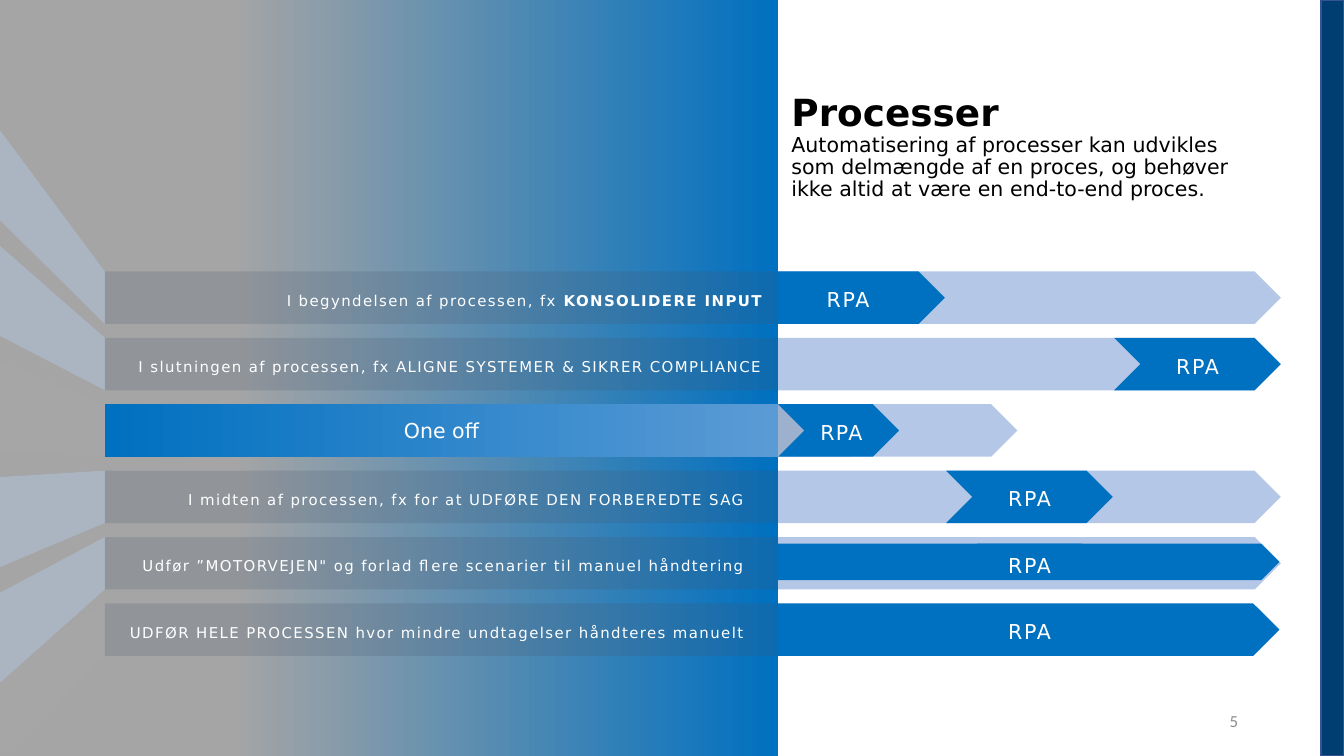
from lxml import etree
from pptx import Presentation
from pptx.dml.color import RGBColor
from pptx.enum.shapes import MSO_SHAPE
from pptx.enum.text import MSO_ANCHOR, PP_ALIGN
from pptx.oxml.ns import qn
from pptx.util import Inches, Pt

RECTANGLE, PLATE, CHEVRON = MSO_SHAPE.RECTANGLE, MSO_SHAPE.PENTAGON, MSO_SHAPE.CHEVRON
LEFT, CENTER, RIGHT = PP_ALIGN.LEFT, PP_ALIGN.CENTER, PP_ALIGN.RIGHT
TOP, MIDDLE, BOTTOM = MSO_ANCHOR.TOP, MSO_ANCHOR.MIDDLE, MSO_ANCHOR.BOTTOM

FONT = "DejaVu Sans"
BLUE, LIGHT_BLUE, SLATE, WHITE = "0070C0", "B4C7E7", "44546A", "FFFFFF"
SLIDE_WIDTH = 10
SLIDE_HEIGHT = SLIDE_WIDTH * 9 / 16
ROW_LEFT, SPLIT = 0.78, 5.79
ROW_TOP, LAST_ROW_TOP, ROW_HEIGHT = 2.02, 4.49, 0.39
ONE_OFF_ROW = 2
ARROW_WIDTH = 3.74

# Label runs as (text, bold), label width, arrow parts and badge position.
# Each arrow part: shape, offset from the split, offset from row top, width, height, colour.
FULL_ARROW = (PLATE, 0, 0, ARROW_WIDTH, ROW_HEIGHT, LIGHT_BLUE)
ROWS = [
    ([("I begyndelsen af processen, fx ", False), ("KONSOLIDERE INPUT", True)], 4.91,
     [FULL_ARROW, (PLATE, 0, 0, 1.24, ROW_HEIGHT, BLUE)], 0.13),
    ([("I slutningen af processen, fx ALIGNE SYSTEMER & SIKRER COMPLIANCE", False)], 4.91,
     [FULL_ARROW, (CHEVRON, 2.5, 0, 1.24, ROW_HEIGHT, BLUE)], 2.73),
    None,
    ([("I midten af processen, fx for at UDFØRE DEN FORBEREDTE SAG", False)], 4.78,
     [FULL_ARROW, (CHEVRON, 1.25, 0, 1.24, ROW_HEIGHT, BLUE)], 1.48),
    ([("Udfør ”MOTORVEJEN\" og forlad flere scenarier til manuel håndtering", False)], 4.78,
     [FULL_ARROW, (PLATE, 0, 0.05, 3.73, 0.27, BLUE)], 1.48),
    ([("UDFØR HELE PROCESSEN hvor mindre undtagelser håndteres manuelt", False)], 4.78,
     [(PLATE, 0, 0, 3.73, ROW_HEIGHT, BLUE)], 1.48),
]


def rgb(hex_color):
    return RGBColor.from_string(hex_color)


def row_top(index):
    return ROW_TOP + index * (LAST_ROW_TOP - ROW_TOP) / (len(ROWS) - 1)


def paint(shape, color, opacity=100):
    shape.shadow.inherit = False
    shape.line.fill.background()
    shape.fill.solid()
    shape.fill.fore_color.rgb = rgb(color)
    if opacity < 100:
        color_element = shape.fill._xPr.find(qn("a:solidFill"))[0]
        etree.SubElement(color_element, qn("a:alpha"), val=str(opacity * 1000))


def add_block(slide, kind, left, top, width, height, color, opacity=100):
    shape = slide.shapes.add_shape(kind, Inches(left), Inches(top), Inches(width), Inches(height))
    paint(shape, color, opacity)
    return shape


def add_gradient_block(slide, left, top, width, height, stops):
    """Stops run from the right edge to the left as (position, colour)."""
    shape = add_block(slide, RECTANGLE, left, top, width, height, WHITE)
    shape.fill.gradient()
    shape.fill.gradient_angle = 180
    for stop, (position, color) in zip(shape.fill.gradient_stops, stops):
        stop.position = position
        stop.color.rgb = rgb(color)
    return shape


def add_text_box(slide, left, top, width, height):
    return slide.shapes.add_textbox(Inches(left), Inches(top), Inches(width), Inches(height))


def write(shape, runs, size, color=WHITE, align=CENTER, anchor=TOP,
          line_spacing=1.2, tracking=0, inset=0.02, font_name=FONT):
    """Fill the shape with one paragraph of (text, bold) runs; tracking is in points."""
    frame = shape.text_frame
    frame.word_wrap = True
    frame.vertical_anchor = anchor
    frame.margin_left = frame.margin_right = Inches(inset)
    frame.margin_top = frame.margin_bottom = Inches(min(inset, 0.05))
    paragraph = frame.paragraphs[0]
    paragraph.alignment = align
    paragraph.line_spacing = line_spacing
    paragraph.font.name = font_name
    paragraph.font.size = Pt(size)
    paragraph.font.color.rgb = rgb(color)
    for text, bold in runs:
        run = paragraph.add_run()
        run.text = text
        run.font.bold = bold
        if tracking:
            run.font._element.set("spc", str(round(tracking * 100)))
    return paragraph


def add_badge(slide, left, row, width=0.78, tracking=0.9):
    badge = add_block(slide, RECTANGLE, left, row + 0.05, width, 0.27, BLUE)
    write(badge, [("RPA", False)], 11, anchor=BOTTOM, tracking=tracking)


def add_rays(slide):
    """Bands that fan out from the rows to the left slide edge."""
    band = 0.67
    for index in reversed(range(len(ROWS))):
        edge = min(0.97 + 0.86 * index, SLIDE_HEIGHT - band)
        row = row_top(index)
        builder = slide.shapes.build_freeform(0, Inches(edge))
        points = [(ROW_LEFT, row), (ROW_LEFT, row + ROW_HEIGHT), (0, edge + band)]
        builder.add_line_segments([(Inches(x), Inches(y)) for x, y in points], close=True)
        if index in (ONE_OFF_ROW, len(ROWS) - 1):
            paint(builder.convert_to_shape(), "A6A6A6")
        else:
            paint(builder.convert_to_shape(), "ADB9CA", 80)


def add_process_row(slide, top, runs, label_width, arrow_parts, badge_offset):
    add_block(slide, RECTANGLE, ROW_LEFT, top, SPLIT - ROW_LEFT, ROW_HEIGHT, SLATE, 20)
    label = add_text_box(slide, ROW_LEFT, top + 0.1, label_width, 0.2)
    write(label, runs, 8, align=RIGHT, tracking=0.75)
    for kind, x, y, width, height, color in arrow_parts:
        add_block(slide, kind, SPLIT + x, top + y, width, height, color)
    add_badge(slide, SPLIT + badge_offset, top)


def add_one_off_row(slide, top):
    add_block(slide, PLATE, ROW_LEFT, top, 6.79, ROW_HEIGHT, LIGHT_BLUE)
    add_block(slide, PLATE, ROW_LEFT, top, 5.74, ROW_HEIGHT, SLATE, 20)
    label = add_gradient_block(slide, ROW_LEFT, top, SPLIT - ROW_LEFT, ROW_HEIGHT,
                               [(0, "5B9BD5"), (1, BLUE)])
    write(label, [("One off", False)], 11, anchor=MIDDLE, line_spacing=1.0)
    add_block(slide, CHEVRON, SPLIT, top, 0.9, ROW_HEIGHT, BLUE)
    add_badge(slide, SPLIT + 0.21, top, width=0.52, tracking=0.7)


def add_background(slide):
    side_bar = add_block(slide, RECTANGLE, 9.83, 0, 0.17, SLIDE_HEIGHT, "003E71")
    side_bar.line.color.rgb = rgb("325491")
    side_bar.line.width = Pt(1)
    add_gradient_block(slide, 0, 0, SPLIT, SLIDE_HEIGHT, [(0, BLUE), (0.7, "A5A5A5")])


def add_heading(slide, left, top, width, height):
    heading = add_text_box(slide, left, top, width, height)
    paragraph = write(heading, [("Processer", True)], 20, color="000000", align=LEFT,
                      line_spacing=0.9, inset=0.1)
    paragraph.add_line_break()
    body = paragraph.add_run()
    body.text = ("Automatisering af processer kan udvikles som delmængde af en proces, "
                 "og behøver ikke altid at være en end-to-end proces.")
    body.font.size = Pt(11)


def add_page_number(slide, left, top, width, height):
    box = add_text_box(slide, left, top, width, height)
    write(box, [("5", False)], 9, color="8C8C8C", align=RIGHT, anchor=MIDDLE,
          line_spacing=1.0, inset=0.1, font_name="Calibri")


def main():
    presentation = Presentation()
    presentation.slide_width = Inches(SLIDE_WIDTH)
    presentation.slide_height = Inches(SLIDE_HEIGHT)
    slide = presentation.slides.add_slide(presentation.slide_layouts[6])
    add_background(slide)
    add_page_number(slide, 7.06, 5.21, 2.25, 0.3)
    add_rays(slide)
    for index, row in enumerate(ROWS):
        if index == ONE_OFF_ROW:
            add_one_off_row(slide, row_top(index))
        else:
            add_process_row(slide, row_top(index), *row)
    add_heading(slide, SPLIT, 0.65, 3.73, 1.04)
    presentation.save("out.pptx")


if __name__ == "__main__":
    main()
